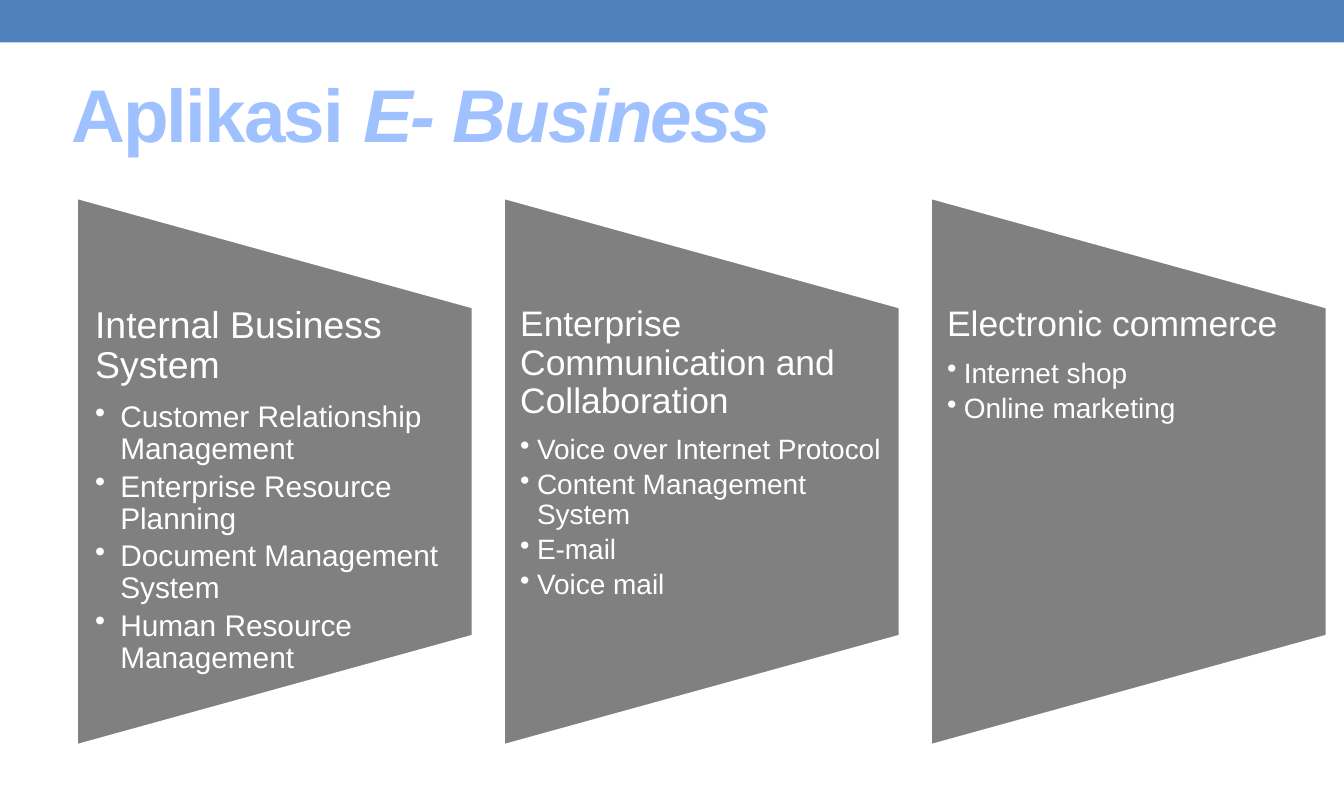
from dataclasses import dataclass

from lxml.etree import SubElement
from pptx import Presentation
from pptx.dml.color import RGBColor
from pptx.enum.shapes import MSO_SHAPE
from pptx.enum.text import MSO_ANCHOR
from pptx.oxml.ns import qn
from pptx.util import Pt

COLORS = {"bar": "4F81BD", "title": "A0C1FF", "panel": "808080", "white": "FFFFFF"}
FONT = "Arial"
STEP = 228.7  # distance from one panel to the next


@dataclass
class Panel:
    head: str
    items: list[str]
    size: float = 19
    small: float = 15
    inset: float = 9
    indent: float = 9


PANELS = [
    Panel("Internal Business System",
          ["Customer Relationship Management", "Enterprise Resource Planning",
           "Document Management System", "Human Resource Management"],
          size=20, small=16, inset=10, indent=13.5),
    Panel("Enterprise Communication and Collaboration",
          ["Voice over Internet Protocol", "Content Management System",
           "E-mail", "Voice mail"]),
    Panel("Electronic commerce", ["Internet shop", "Online marketing"]),
]


def color(name: str) -> RGBColor:
    return RGBColor.from_string(COLORS[name])


def add_block(slide, kind, x: float, y: float, w: float, h: float, fill: str):
    shape = slide.shapes.add_shape(kind, Pt(x), Pt(y), Pt(w), Pt(h))
    shape.shadow.inherit = False
    shape.fill.solid()
    shape.fill.fore_color.rgb = color(fill)
    shape.line.fill.background()
    return shape


def add_frame(slide, x: float, y: float, w: float, h: float):
    frame = slide.shapes.add_textbox(Pt(x), Pt(y), Pt(w), Pt(h)).text_frame
    frame.word_wrap = True
    return frame


def set_font(para, size: float, tint: str) -> None:
    para.font.name = FONT
    para.font.size = Pt(size)
    para.font.color.rgb = color(tint)


def add_bullet(para, indent: float) -> None:
    props = para._p.get_or_add_pPr()
    props.set("marL", str(Pt(indent)))
    props.set("indent", str(-Pt(indent)))
    SubElement(props, qn("a:buChar"), char="•")


def add_title(slide) -> None:
    frame = add_frame(slide, 31, 25.2, 648, 70.6)
    frame.vertical_anchor = MSO_ANCHOR.MIDDLE
    para = frame.paragraphs[0]
    for text, slant in (("Aplikasi ", False), ("E- Business", True)):
        run = para.add_run()
        run.text = text
        run.font.italic = slant
        run._r.get_or_add_rPr().set("spc", "-100")
    set_font(para, 40, "title")
    para.font.bold = True


def add_panel(slide, panel: Panel, shift: float) -> None:
    shape = add_block(slide, MSO_SHAPE.FLOWCHART_MANUAL_OPERATION,
                      shift, 146.2, 294.5, 213, "panel")
    shape.rotation = 270
    shape.line.color.rgb = color("white")
    shape.line.width = Pt(2.08)

    frame = add_frame(slide, 41 + shift, 164.2, 213, 177)
    frame.margin_left, frame.margin_right = Pt(panel.inset), Pt(10)
    frame.margin_top = frame.margin_bottom = 0
    for i, text in enumerate([panel.head, *panel.items]):
        para = frame.add_paragraph() if i else frame.paragraphs[0]
        para.text = text
        size = panel.small if i else panel.size
        para.line_spacing = 0.9
        para.space_after = Pt(size * (0.17 if i else 0.4))
        if i:
            add_bullet(para, panel.indent)
        set_font(para, size, "white")


def main() -> None:
    deck = Presentation()
    deck.slide_width, deck.slide_height = Pt(720), Pt(425.5)
    slide = deck.slides.add_slide(deck.slide_layouts[6])
    add_block(slide, MSO_SHAPE.RECTANGLE, 0, 0, 720, 22.7, "bar")
    add_title(slide)
    for i, panel in enumerate(PANELS):
        add_panel(slide, panel, i * STEP)
    deck.save("out.pptx")


if __name__ == "__main__":
    main()
